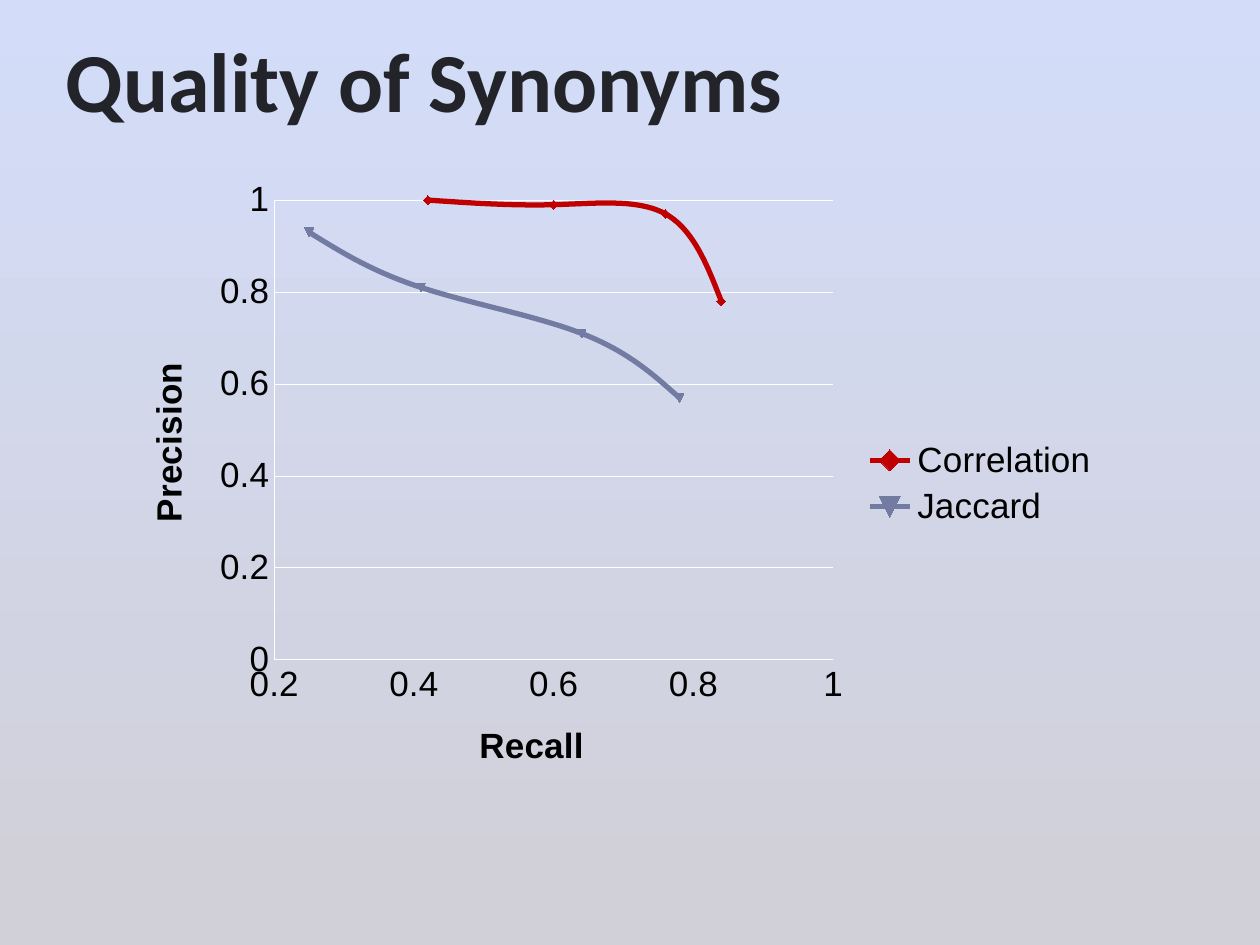
from dataclasses import dataclass

from pptx import Presentation
from pptx.chart.data import XyChartData
from pptx.dml.color import RGBColor
from pptx.enum.chart import XL_CHART_TYPE, XL_LEGEND_POSITION, XL_MARKER_STYLE, XL_TICK_MARK
from pptx.enum.text import MSO_ANCHOR
from pptx.oxml import parse_xml
from pptx.oxml.ns import nsdecls, qn
from pptx.util import Cm, Pt


@dataclass(frozen=True)
class Theme:
    sky: RGBColor = RGBColor.from_string("D3DDF9")
    haze: RGBColor = RGBColor.from_string("D1CFD7")
    ink: RGBColor = RGBColor.from_string("23232A")
    label: RGBColor = RGBColor.from_string("000000")
    grid: RGBColor = RGBColor.from_string("FFFFFF")
    correlation: RGBColor = RGBColor.from_string("C00000")
    jaccard: RGBColor = RGBColor.from_string("727CA3")
    title_font: str = "Calibri"
    chart_font: str = "Arial"
    title_size: Pt = Pt(48)
    chart_size: Pt = Pt(20)
    curve: Pt = Pt(3)
    hairline: Pt = Pt(0.5)


theme = Theme()

prs = Presentation()
prs.slide_width, prs.slide_height = Cm(25.4), Cm(19.05)
s = prs.slides.add_slide(prs.slide_layouts[6])

fill = s.background.fill
fill.gradient()
fill.gradient_angle = 270
for stop, color in zip(fill.gradient_stops, (theme.sky, theme.haze)):
    stop.color.rgb = color

sp = s.shapes.add_textbox(Cm(1.07), Cm(0.84), Cm(22.86), Cm(2.11))
tf = sp.text_frame
tf.word_wrap = True
tf.vertical_anchor = MSO_ANCHOR.TOP
p = tf.paragraphs[0]
p.line_spacing = 0.8
r = p.add_run()
r.text = "Quality of Synonyms"
r.font.name, r.font.size, r.font.bold = theme.title_font, theme.title_size, True
r.font.color.rgb = theme.ink

curves = [
    ("Correlation", theme.correlation, 1, [(0.84, 0.78), (0.76, 0.97), (0.6, 0.99), (0.42, 1)]),
    ("Jaccard", theme.jaccard, 0, [(0.78, 0.57), (0.64, 0.71), (0.41, 0.81), (0.25, 0.93)]),
]
data = XyChartData(number_format="General")
for name, color, order, points in curves:
    series = data.add_series(name)
    for recall, precision in points:
        series.add_data_point(recall, precision)

chart = s.shapes.add_chart(
    XL_CHART_TYPE.XY_SCATTER_SMOOTH, Cm(2.31), Cm(3.4), Cm(20.12), Cm(12.7), data
).chart
chart.has_title = False
chart.font.name, chart.font.size = theme.chart_font, theme.chart_size
chart.font.color.rgb = theme.label
chart.has_legend = True
chart.legend.position = XL_LEGEND_POSITION.RIGHT
chart.legend.include_in_layout = False

plot = chart.plots[0]
plot.vary_by_categories = False
for number, (series, (name, color, order, points)) in enumerate(zip(tuple(plot.series), curves), 1):
    for tag, value in (("c:idx", number), ("c:order", order), ("c:smooth", 1)):
        series._element.find(qn(tag)).set("val", str(value))
    series.format.line.width = theme.curve
    series.format.line.color.rgb = color
    marker = series.marker
    marker.style, marker.size = XL_MARKER_STYLE.AUTOMATIC, 5
    marker.format.fill.solid()
    marker.format.fill.fore_color.rgb = color
    marker.format.line.color.rgb = color

for axis, title, low in ((chart.category_axis, "Recall", 0.2), (chart.value_axis, "Precision", 0)):
    axis.minimum_scale, axis.maximum_scale, axis.major_unit = low, 1, 0.2
    axis.major_tick_mark = axis.minor_tick_mark = XL_TICK_MARK.NONE
    axis.format.line.color.rgb = theme.grid
    axis.format.line.width = theme.hairline
    axis.tick_labels.number_format = "General"
    axis.tick_labels.number_format_is_linked = False
    r = axis.axis_title.text_frame.paragraphs[0].add_run()
    r.text = title
    r.font.name, r.font.size, r.font.bold = theme.chart_font, theme.chart_size, True
    r.font.color.rgb = theme.label

chart.category_axis.has_major_gridlines = False
chart.value_axis.has_major_gridlines = True
gridline = chart.value_axis.major_gridlines.format.line
gridline.color.rgb, gridline.width = theme.grid, theme.hairline

plot_area = chart._chartSpace.chart.plotArea
for old in plot_area.findall(qn("c:layout")):
    plot_area.remove(old)
frame = "".join(f'<c:{k} val="{v}"/>' for k, v in {
    "layoutTarget": "inner", "xMode": "edge", "yMode": "edge",
    "x": 0.16, "y": 0.05, "w": 0.56, "h": 0.73}.items())
plot_area.insert(0, parse_xml(
    f'<c:layout {nsdecls("c")}><c:manualLayout>{frame}</c:manualLayout></c:layout>'))

prs.save("out.pptx")
